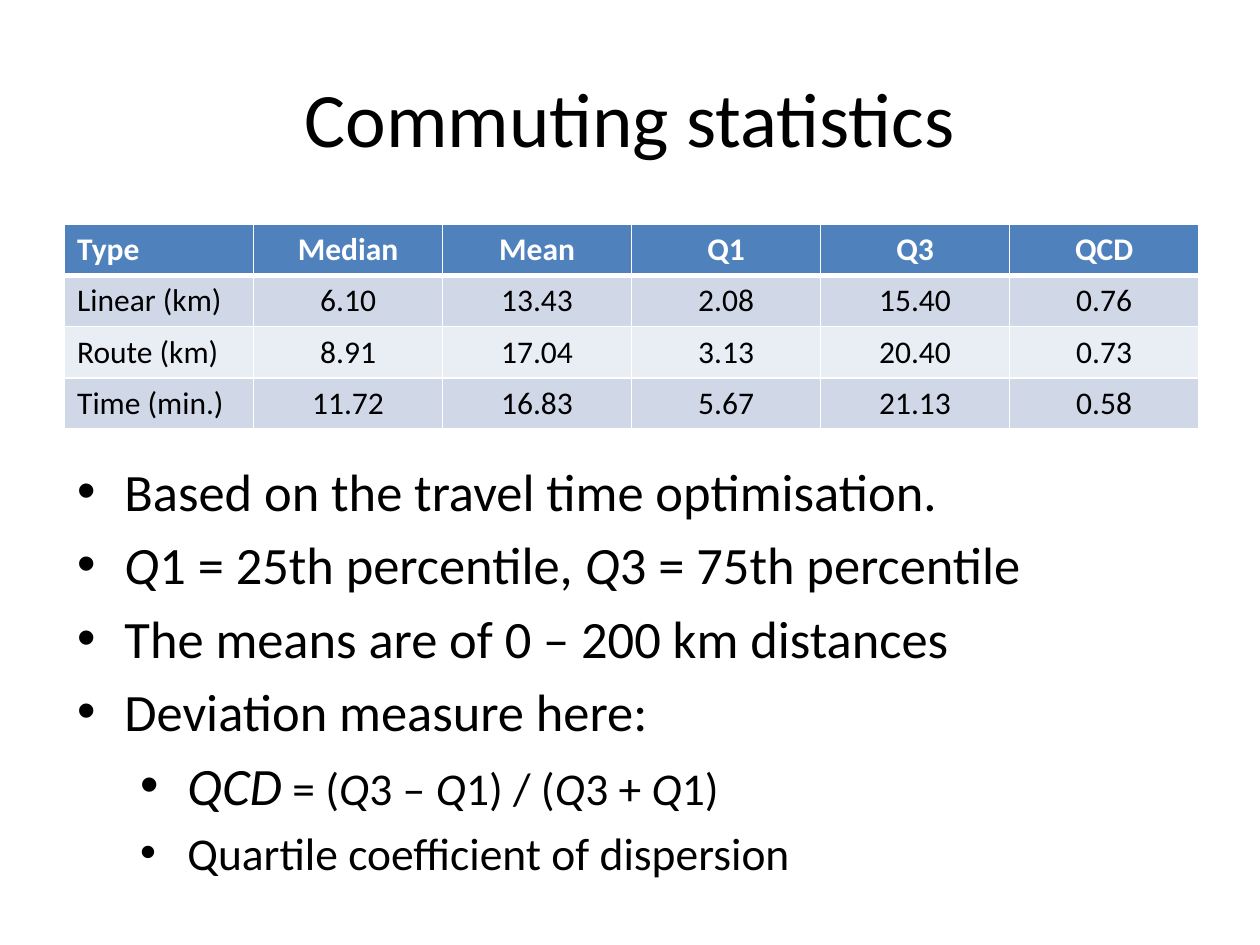
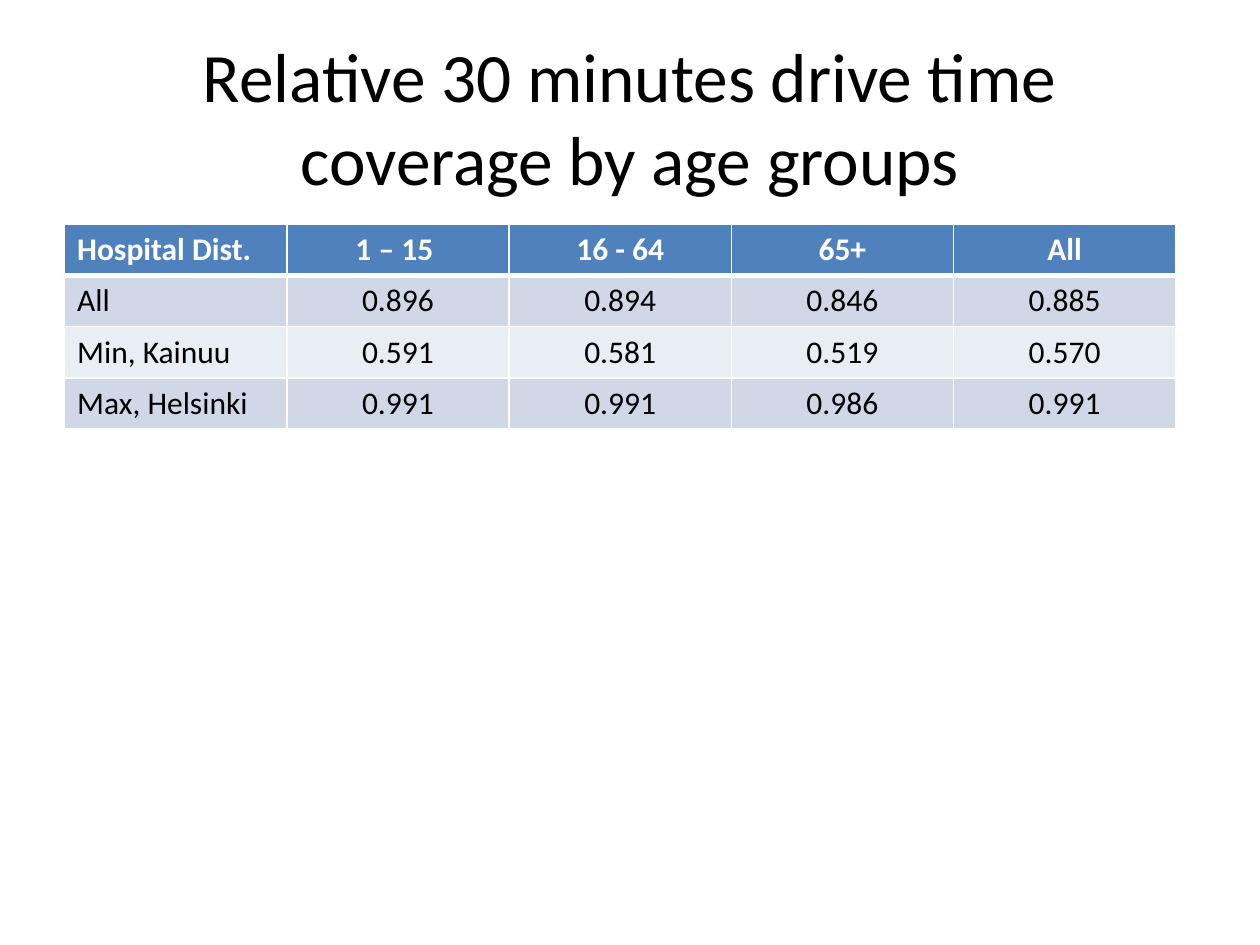
from lxml.etree import SubElement
from pptx import Presentation
from pptx.dml.color import RGBColor
from pptx.enum.text import MSO_ANCHOR, MSO_AUTO_SIZE, PP_ALIGN
from pptx.oxml import parse_xml
from pptx.oxml.ns import nsdecls, qn
from pptx.util import Pt

FONT = "Calibri"
BLACK, WHITE = "000000", "FFFFFF"
HEADER_FILL = "4F81BD"
ROW_FILLS = ["D0D8E8", "E9EDF4"]
TITLE_BOX = (36, 21.6, 648, 90)
ROW_HEIGHT = 29.2
INDENT = 27

COMMUTING = [
    ["Type", "Median", "Mean", "Q1", "Q3", "QCD"],
    ["Linear (km)", "6.10", "13.43", "2.08", "15.40", "0.76"],
    ["Route (km)", "8.91", "17.04", "3.13", "20.40", "0.73"],
    ["Time (min.)", "11.72", "16.83", "5.67", "21.13", "0.58"],
]
COVERAGE = [
    ["Hospital Dist.", "1 – 15 ", "16 - 64", "65+", "All"],
    ["All", "0.896", "0.894", "0.846", "0.885"],
    ["Min, Kainuu", "0.591", "0.581", "0.519", "0.570"],
    ["Max, Helsinki", "0.991", "0.991", "0.986", "0.991"],
]
NOTES = [
    (0, [("Based on the travel time optimisation.", 30)]),
    (0, [("*Q*1 = 25th percentile, *Q*3 = 75th percentile", 30)]),
    (0, [("The means are of 0 – 200 km distances", 30)]),
    (0, [("Deviation measure here:", 30)]),
    (1, [("*QCD*", 30), (" = (*Q*3 – *Q*1) / (*Q*3 + *Q*1)", 26)]),
    (1, [("Quartile coefficient of dispersion", 26)]),
]


def colour(hex_code):
    """Return the colour for a hex string."""
    return RGBColor.from_string(hex_code)


def add_text(paragraph, text, size=18, color=BLACK, bold=False, align=None):
    """Append text to a paragraph, with words between asterisks in italics."""
    if align is not None:
        paragraph.alignment = align
    for index, part in enumerate(text.split("*")):
        if part:
            run = paragraph.add_run()
            run.text = part
            run.font.name = FONT
            run.font.size = Pt(size)
            run.font.bold = bold
            run.font.italic = index % 2 == 1
            run.font.color.rgb = colour(color)


def place(region, box):
    """Move a region to a box of left, top, width and height."""
    region.left, region.top, region.width, region.height = map(Pt, box)


def add_title(slide, box, text, size):
    """Fill the title placeholder."""
    title = slide.shapes.title
    place(title, box)
    frame = title.text_frame
    frame.auto_size = MSO_AUTO_SIZE.NONE
    frame.vertical_anchor = MSO_ANCHOR.MIDDLE
    add_text(frame.paragraphs[0], text, size=size, align=PP_ALIGN.CENTER)


def set_borders(cell, top, bottom):
    """Draw white borders around a cell, given its top and bottom widths."""
    widths = {"lnL": 1, "lnR": 1, "lnT": top, "lnB": bottom}
    properties = cell._tc.get_or_add_tcPr()
    for index, (side, width) in enumerate(widths.items()):
        properties.insert(index, parse_xml(
            f'<a:{side} {nsdecls("a")} w="{Pt(width)}"><a:solidFill>'
            f'<a:srgbClr val="{WHITE}"/></a:solidFill></a:{side}>'))


def add_statistics(slide, box, rows):
    """Add a table with a header row, banded rows and equal columns."""
    left, top, width = box
    table = slide.shapes.add_table(
        len(rows), len(rows[0]), Pt(left), Pt(top), Pt(width),
        Pt(ROW_HEIGHT * len(rows))).table
    for row, values in enumerate(rows):
        header = row == 0
        for column, value in enumerate(values):
            cell = table.cell(row, column)
            cell.vertical_anchor = MSO_ANCHOR.MIDDLE
            cell.fill.solid()
            cell.fill.fore_color.rgb = colour(
                HEADER_FILL if header else ROW_FILLS[(row - 1) % 2])
            set_borders(cell, top=3 if row == 1 else 1, bottom=3 if header else 1)
            add_text(cell.text_frame.paragraphs[0], value, bold=header,
                     color=WHITE if header else BLACK,
                     align=PP_ALIGN.CENTER if column else PP_ALIGN.LEFT)


def add_notes(slide, box, notes):
    """Fill the body placeholder with a bulleted list of two levels."""
    body = slide.placeholders[1]
    place(body, box)
    frame = body.text_frame
    frame.auto_size = MSO_AUTO_SIZE.NONE
    for index, (level, parts) in enumerate(notes):
        paragraph = frame.add_paragraph() if index else frame.paragraphs[0]
        paragraph.level = level
        properties = paragraph._p.get_or_add_pPr()
        properties.set("marL", str(Pt(INDENT + 36 * level)))
        properties.set("indent", str(-Pt(INDENT)))
        SubElement(properties, qn("a:buFont"), typeface="Arial")
        SubElement(properties, qn("a:buChar"), char="•")
        for text, size in parts:
            add_text(paragraph, text, size=size)


def build_commuting(deck):
    """Build the slide on commuting statistics."""
    slide = deck.slides.add_slide(deck.slide_layouts[1])
    add_title(slide, TITLE_BOX, "Commuting statistics", 44)
    add_statistics(slide, (36.9, 128.3, 648), COMMUTING)
    add_notes(slide, (36.9, 258.5, 646.6, 255.6), NOTES)


def build_coverage(deck):
    """Build the slide on drive time coverage."""
    slide = deck.slides.add_slide(deck.slide_layouts[5])
    add_title(slide, TITLE_BOX,
              "Relative 30 minutes drive time coverage by age groups", 39.6)
    add_statistics(slide, (36.9, 128.3, 635), COVERAGE)


def main():
    """Build and save the presentation."""
    deck = Presentation()
    deck.slide_width, deck.slide_height = Pt(720), Pt(540)
    build_commuting(deck)
    build_coverage(deck)
    deck.save("out.pptx")


if __name__ == "__main__":
    main()
